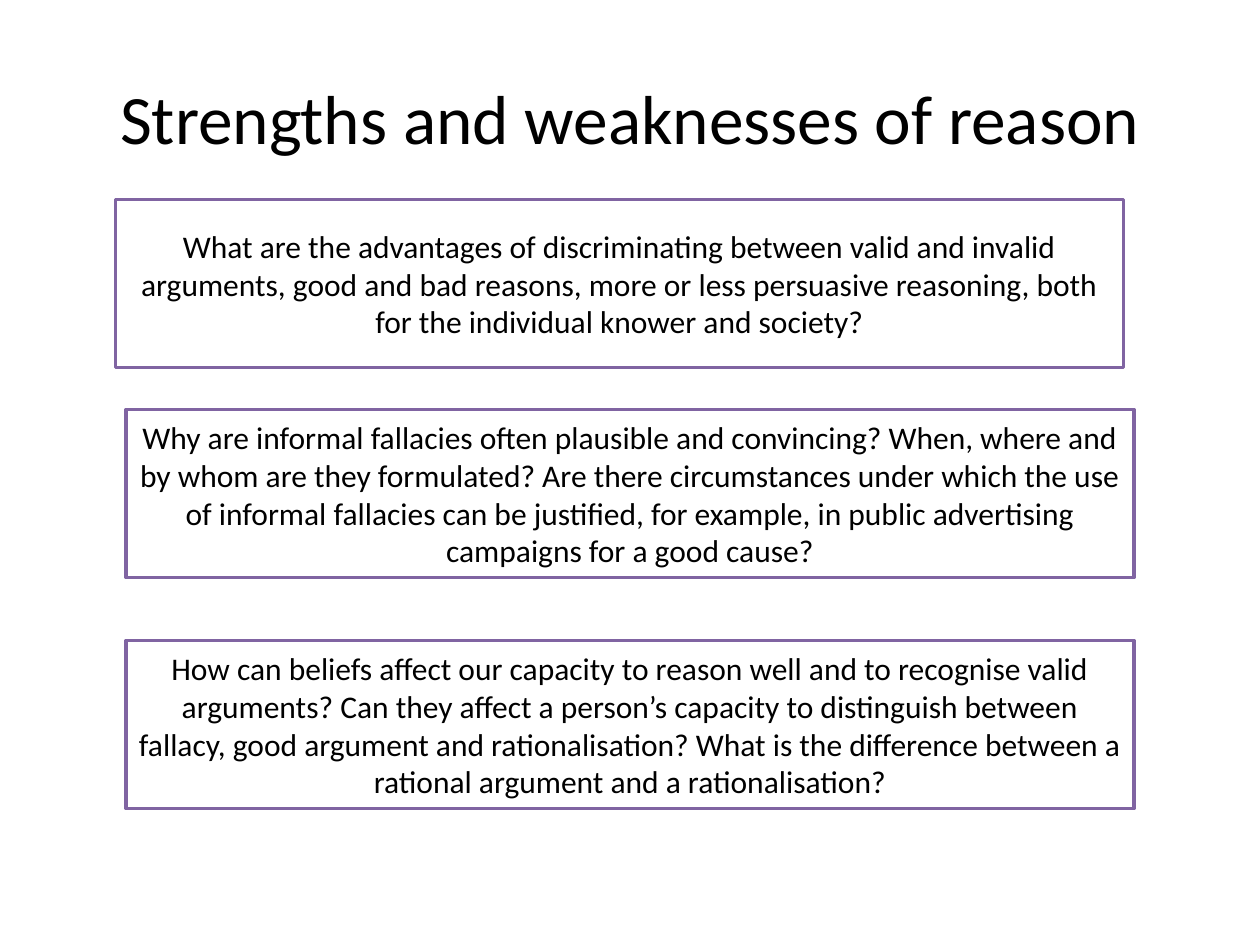
from dataclasses import dataclass

from pptx import Presentation
from pptx.dml.color import RGBColor
from pptx.enum import shapes, text
from pptx.util import Inches, Pt


@dataclass(frozen=True)
class Theme:
    font: str = "Calibri"
    ink: RGBColor = RGBColor(0x00, 0x00, 0x00)
    paper: RGBColor = RGBColor(0xFF, 0xFF, 0xFF)
    border: RGBColor = RGBColor(0x80, 0x64, 0xA2)
    border_width: float = 2
    heading_size: float = 39.6
    question_size: float = 18


theme = Theme()

deck = Presentation()
deck.slide_width, deck.slide_height = Inches(10), Inches(7.5)
slide = deck.slides.add_slide(deck.slide_layouts[6])
column = deck.slide_width // 120
row = deck.slide_height // 90


def write(holder, words, size):
    frame = holder.text_frame
    frame.word_wrap = True
    frame.vertical_anchor = text.MSO_ANCHOR.MIDDLE
    paragraph = frame.paragraphs[0]
    paragraph.alignment = text.PP_ALIGN.CENTER
    run = paragraph.add_run()
    run.text = words
    run.font.name = theme.font
    run.font.size = Pt(size)
    run.font.color.rgb = theme.ink


heading = slide.shapes.add_textbox(6 * column, int(3.6 * row), 108 * column, 15 * row)
write(heading, "Strengths and weaknesses of reason", theme.heading_size)

questions = [
    (11, 19, "What are the advantages of discriminating between valid and invalid "
             "arguments, good and bad reasons, more or less persuasive reasoning, "
             "both for the individual knower and society?"),
    (12, 39, "Why are informal fallacies often plausible and convincing? When, where "
             "and by whom are they formulated? Are there circumstances under which "
             "the use of informal fallacies can be justified, for example, in public "
             "advertising campaigns for a good cause?"),
    (12, 61, "How can beliefs affect our capacity to reason well and to recognise "
             "valid arguments? Can they affect a person’s capacity to distinguish "
             "between fallacy, good argument and rationalisation? What is the "
             "difference between a rational argument and a rationalisation?"),
]

for left, top, words in questions:
    question = slide.shapes.add_shape(
        shapes.MSO_SHAPE.RECTANGLE, left * column, top * row, 96 * column, 16 * row)
    question.shadow.inherit = False
    question.fill.solid()
    question.fill.fore_color.rgb = theme.paper
    question.line.color.rgb = theme.border
    question.line.width = Pt(theme.border_width)
    write(question, words, theme.question_size)

deck.save("out.pptx")
